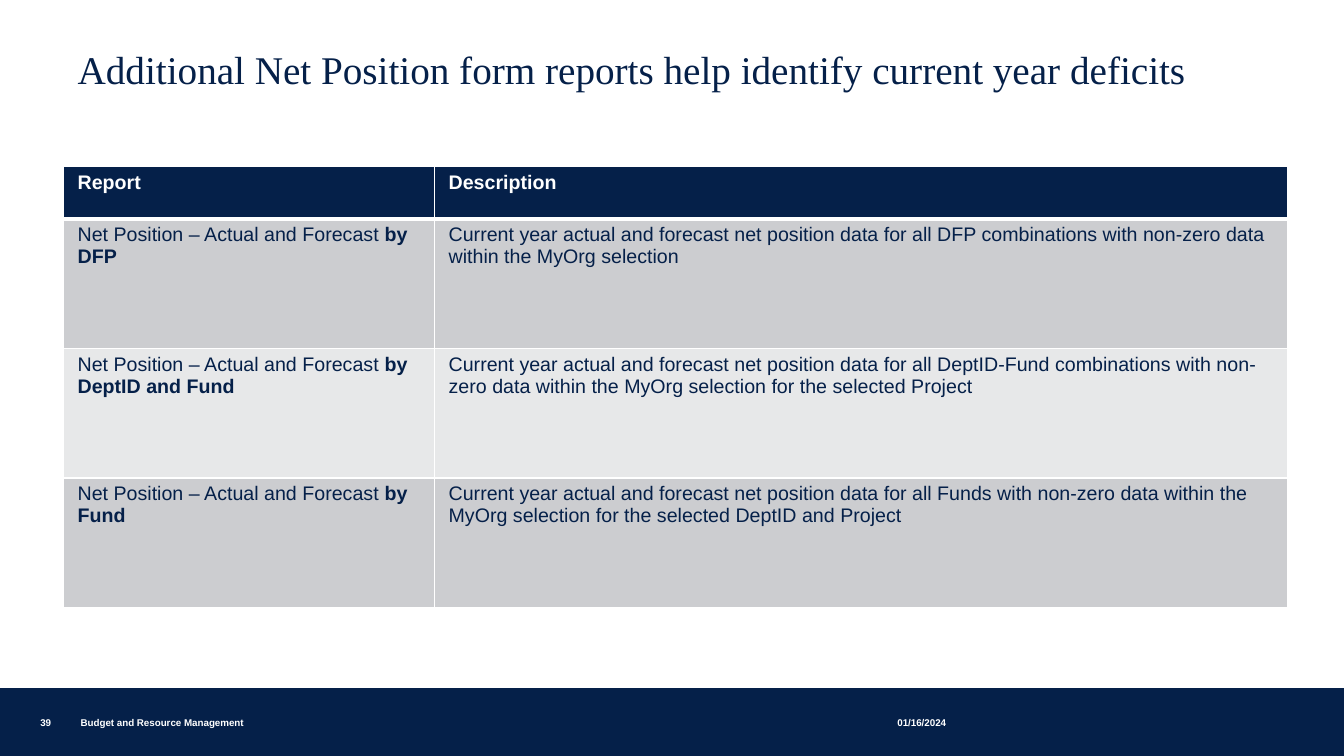
from lxml.etree import SubElement
from pptx import Presentation
from pptx.dml.color import RGBColor
from pptx.enum.shapes import MSO_SHAPE as Shape
from pptx.enum.text import MSO_ANCHOR as Anchor, MSO_AUTO_SIZE as AutoSize, PP_ALIGN as Align
from pptx.oxml.ns import qn
from pptx.util import Inches, Pt

COLORS = {"navy": "052049", "white": "FFFFFF", "dark_band": "CCCDD0", "light_band": "E7E8E9"}
REPORTS = [
    ("DFP", "Current year actual and forecast net position data for all DFP combinations "
            "with non-zero data within the MyOrg selection"),
    ("DeptID and Fund", "Current year actual and forecast net position data for all DeptID-Fund "
                        "combinations with non-zero data within the MyOrg selection for the selected Project"),
    ("Fund", "Current year actual and forecast net position data for all Funds with non-zero data "
             "within the MyOrg selection for the selected DeptID and Project"),
]


def color(name):
    """Return the named colour."""
    return RGBColor.from_string(COLORS[name])


def format_font(font, name, size, color_name, bold=False):
    """Apply typeface, size, colour and weight."""
    font.name, font.size, font.bold = name, Pt(size), bold
    font.color.rgb = color(color_name)


def add_title(slide, left, top, width, height):
    """Place the headline in the title placeholder."""
    title = slide.shapes.title
    title.left, title.top = Inches(left), Inches(top)
    title.width, title.height = Inches(width), Inches(height)
    frame = title.text_frame
    frame.text = "Additional Net Position form reports help identify current year deficits"
    frame.auto_size = AutoSize.NONE
    frame.vertical_anchor = Anchor.MIDDLE
    paragraph = frame.paragraphs[0]
    paragraph.alignment = Align.LEFT
    paragraph.line_spacing = 0.85
    format_font(paragraph.runs[0].font, "Times New Roman", 28, "navy")


def set_borders(cell, bottom_width):
    """Draw white cell borders with the given bottom width."""
    properties = cell._tc.get_or_add_tcPr()
    for side, width in (("L", 1), ("R", 1), ("T", 1), ("B", bottom_width)):
        line = SubElement(properties, qn(f"a:ln{side}"), w=str(Pt(width)))
        fill = SubElement(line, qn("a:solidFill"))
        SubElement(fill, qn("a:srgbClr"), val=COLORS["white"])


def fill_cell(cell, parts, fill_name, text_color, bottom_width):
    """Write (text, bold) parts into a filled and bordered cell."""
    set_borders(cell, bottom_width)
    cell.fill.solid()
    cell.fill.fore_color.rgb = color(fill_name)
    cell.margin_left = cell.margin_right = Inches(0.14)
    paragraph = cell.text_frame.paragraphs[0]
    paragraph.alignment = Align.LEFT
    for text, bold in parts:
        run = paragraph.add_run()
        run.text = text
        format_font(run.font, "Arial", 14, text_color, bold)


def add_report_table(slide, left, top, width, height):
    """Place the report table with a header and banded rows."""
    header_height, report_width = 0.52, 3.68
    table = slide.shapes.add_table(len(REPORTS) + 1, 2, Inches(left), Inches(top),
                                   Inches(width), Inches(height)).table
    table.columns[0].width = Inches(report_width)
    table.columns[1].width = Inches(width - report_width)
    table.rows[0].height = Inches(header_height)
    for column, heading in enumerate(("Report", "Description")):
        fill_cell(table.cell(0, column), [(heading, True)], "navy", "white", 3)
    for row, (grouping, description) in enumerate(REPORTS, 1):
        table.rows[row].height = Inches((height - header_height) / len(REPORTS))
        band = "dark_band" if row % 2 else "light_band"
        report = [("Net Position – Actual and Forecast ", False), (f"by {grouping}", True)]
        fill_cell(table.cell(row, 0), report, band, "navy", 1)
        fill_cell(table.cell(row, 1), [(description, False)], band, "navy", 1)


def add_footer(slide, left, top, width, height):
    """Place the footer band with page number, department and date."""
    band = slide.shapes.add_shape(Shape.RECTANGLE, Inches(left), Inches(top),
                                  Inches(width), Inches(height))
    band.shadow.inherit = False
    band.fill.solid()
    band.fill.fore_color.rgb = band.line.color.rgb = color("navy")
    band.line.width = Pt(1.5)
    for text, offset, text_width in (("39", 0.4, 0.36),
                                     ("Budget and Resource Management", 0.8, 6.29),
                                     ("01/16/2024", 8.9, 1.35)):
        box = slide.shapes.add_textbox(Inches(left + offset), Inches(top + 0.22),
                                       Inches(text_width), Inches(0.17))
        frame = box.text_frame
        frame.word_wrap = True
        frame.vertical_anchor = Anchor.BOTTOM
        frame.margin_left = frame.margin_right = frame.margin_top = frame.margin_bottom = 0
        frame.text = text
        format_font(frame.paragraphs[0].runs[0].font, "Arial", 7, "white", True)


def main():
    """Build and save the slide."""
    presentation = Presentation()
    presentation.slide_width, presentation.slide_height = Inches(13.33), Inches(7.5)
    slide = presentation.slides.add_slide(presentation.slide_layouts[5])
    slide.background.fill.solid()
    slide.background.fill.fore_color.rgb = color("white")
    add_footer(slide, 0, 6.84, 13.33, 0.66)
    add_title(slide, 0.67, 0.47, 11.8, 0.5)
    add_report_table(slide, 0.63, 1.65, 12.14, 4.38)
    presentation.save("out.pptx")


if __name__ == "__main__":
    main()
